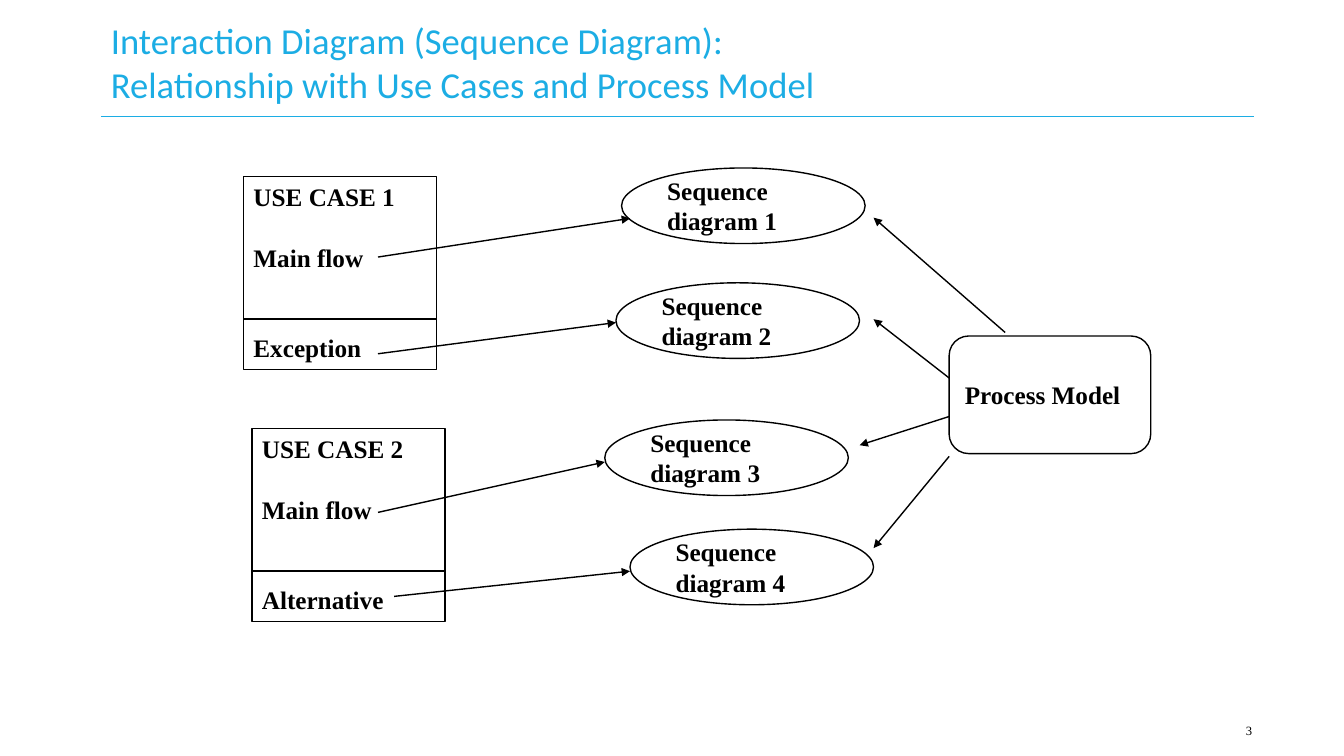
from pptx import Presentation
from pptx.dml.color import RGBColor
from pptx.enum.shapes import MSO_CONNECTOR as Link, MSO_SHAPE as Kind
from pptx.enum.text import MSO_ANCHOR as Anchor, MSO_AUTO_SIZE as Fit, PP_ALIGN as Align
from pptx.oxml.ns import qn
from pptx.util import Pt
from lxml.etree import SubElement

BLACK = RGBColor(0x00, 0x00, 0x00)
BLUE = RGBColor(0x1C, 0xAD, 0xE4)
SERIF = "Times New Roman"
PITCH = 21.6

# left, top, name of the second flow
CASES = [(174, 126, "Exception"), (180, 306, "Alternative")]
OVALS = [(444, 120), (440, 202), (432, 300), (450, 378)]
FLOWS = [
    (270, 183.6, 450, 156),
    (270, 252.7, 440, 230.4),
    (270, 366, 432, 330),
    (281.5, 426, 450, 408),
]
LINKS = [
    (718, 237.5, 624, 155.5),
    (678, 270, 624, 228),
    (678, 297.5, 614, 318),
    (678, 326, 624, 391.5),
]


def style(para, size, color=BLACK, name=SERIF, bold=False):
    font = para.font
    font.size, font.name, font.bold = Pt(size), name, bold
    font.color.rgb = color


def add_title(slide, text):
    title = slide.shapes.title
    title.left, title.top, title.width, title.height = Pt(72), Pt(9.4), Pt(731.5), Pt(69)
    frame = title.text_frame
    frame.text = text
    frame.word_wrap, frame.auto_size = True, Fit.NONE
    frame.vertical_anchor = Anchor.MIDDLE
    para = frame.paragraphs[0]
    para.alignment = Align.LEFT
    style(para, 26.1, BLUE, "Calibri")


def add_line(slide, x1, y1, x2, y2, color=BLACK, arrow=False):
    line = slide.shapes.add_connector(Link.STRAIGHT, Pt(x1), Pt(y1), Pt(x2), Pt(y2))
    line.line.color.rgb, line.line.width = color, Pt(1)
    if arrow:
        SubElement(line.line._get_or_add_ln(), qn("a:tailEnd"), type="triangle")
    SubElement(line._element.spPr, qn("a:effectLst"))


def add_box(slide, kind, left, top, width, height, lines, anchor=Anchor.MIDDLE):
    """Draw an outlined shape; lines holds (text, space before) pairs."""
    box = slide.shapes.add_shape(kind, Pt(left), Pt(top), Pt(width), Pt(height))
    box.shadow.inherit = False
    box.fill.background()
    box.line.color.rgb, box.line.width = BLACK, Pt(1)
    frame = box.text_frame
    frame.word_wrap, frame.vertical_anchor = True, anchor
    frame.text = "\n".join(text for text, _ in lines)
    for para, (_, gap) in zip(frame.paragraphs, lines):
        para.alignment = Align.LEFT
        para.line_spacing, para.space_before = Pt(PITCH), Pt(gap)
        style(para, 18, bold=True)


def add_case(slide, num, left, top, other):
    lines = [(f"USE CASE {num}", 0), ("Main flow", PITCH), (other, 2 * PITCH)]
    add_box(slide, Kind.RECTANGLE, left, top, 138, 138, lines, Anchor.TOP)
    add_line(slide, left, top + 102, left + 138, top + 102)


def add_number(slide, text):
    frame = slide.shapes.add_textbox(Pt(835), Pt(507.6), Pt(66.5), Pt(29)).text_frame
    frame.text = text
    frame.word_wrap, frame.vertical_anchor = True, Anchor.MIDDLE
    para = frame.paragraphs[0]
    para.alignment = Align.RIGHT
    style(para, 9)


def main():
    deck = Presentation()
    deck.slide_width, deck.slide_height = Pt(960), Pt(540)
    slide = deck.slides.add_slide(deck.slide_layouts[5])
    add_title(slide, "Interaction Diagram (Sequence Diagram):\v"
                     "Relationship with Use Cases and Process Model")
    add_line(slide, 72, 83, 896, 83, BLUE)
    for num, case in enumerate(CASES, 1):
        add_case(slide, num, *case)
    for num, (left, top) in enumerate(OVALS, 1):
        lines = [("Sequence", 0), (f"diagram {num}", 0)]
        add_box(slide, Kind.OVAL, left, top, 174, 54, lines)
    add_box(slide, Kind.ROUNDED_RECTANGLE, 678, 240, 144, 84, [("Process Model", 0)])
    for ends in FLOWS + LINKS:
        add_line(slide, *ends, arrow=True)
    add_number(slide, "3")
    deck.save("out.pptx")


if __name__ == "__main__":
    main()
